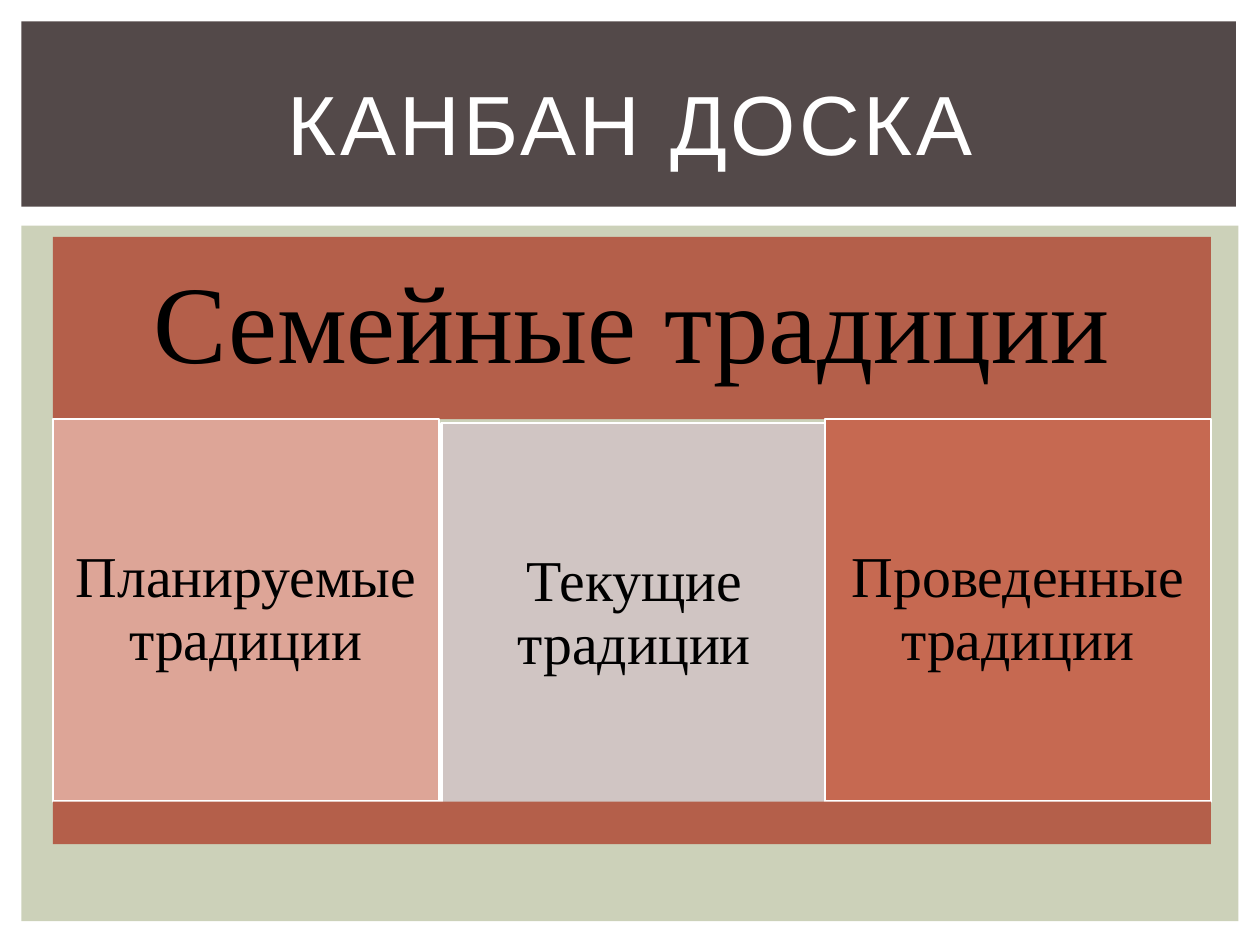
from pptx import Presentation, util as u
from pptx.dml.color import RGBColor
from pptx.enum import shapes, text

# Grid of 100 columns by 75 rows
COLS, ROWS = 100, 75
WIDE, HIGH = u.Inches(10), u.Inches(7.5)
HUES = {
    "sage": "CCD1B9", "dark": "534949", "brick": "B45F4A", "pink": "DDA597",
    "grey": "D0C5C3", "rust": "C66951", "white": "FFFFFF", "black": "000000",
}


def hue(name):
    return RGBColor.from_string(HUES[name])


def place(box):
    x, y, w, h = box
    return (int(WIDE * x / COLS), int(HIGH * y / ROWS),
            int(WIDE * w / COLS), int(HIGH * h / ROWS))


def panel(slide, box, fill, line=None):
    rect = slide.shapes.add_shape(shapes.MSO_SHAPE.RECTANGLE, *place(box))
    rect.shadow.inherit = False
    rect.fill.solid()
    rect.fill.fore_color.rgb = hue(fill)
    if line:
        rect.line.color.rgb = hue(line)
        rect.line.width = u.Pt(1.5)
    else:
        rect.line.fill.background()
    return rect


def write(shape, words, size, font="Times New Roman", color="black",
          inset=None, lead=None, track=0):
    frame = shape.text_frame
    frame.word_wrap = True
    frame.vertical_anchor = text.MSO_ANCHOR.MIDDLE
    if inset is not None:
        frame.margin_left = frame.margin_right = u.Inches(inset)
        frame.margin_top = frame.margin_bottom = u.Inches(inset)
    para = frame.paragraphs[0]
    para.alignment = text.PP_ALIGN.CENTER
    if lead:
        para.line_spacing = lead
    run = para.add_run()
    run.text = words
    run.font.name = font
    run.font.size = u.Pt(size)
    run.font.color.rgb = hue(color)
    if track:
        run.font._element.set("spc", str(track * 100))


def header(slide, box):
    x, y, w, h = box
    panel(slide, box, "dark")
    title = slide.shapes.add_textbox(
        *place((x + 2.5, y + 2.2, w - 4.7, h - 3.2)))
    write(title, "КАНБАН ДОСКА", 48, font="Arial", color="white", track=2)


def board(slide, box):
    x, y, w, h = box
    top, base = 0.3 * h, 0.07 * h
    # Heading band
    write(panel(slide, (x, y, w, top), "brick"),
          "Семейные традиции", 63, inset=0.26, lead=0.9)
    # Three stages, the middle one nudged right and down
    stages = [
        ("Планируемые традиции", "pink", 0),
        ("Текущие традиции", "grey", 1),
        ("Проведенные традиции", "rust", 0),
    ]
    step, tall = w / len(stages), h - top - base
    for i, (words, fill, nudge) in enumerate(stages):
        cell = (x + i * step + 0.2 * nudge, y + top + 0.3 * nudge, step, tall)
        write(panel(slide, cell, fill, line="white"),
              words, 33, inset=0.14, lead=0.9)
    # Closing band
    panel(slide, (x, y + h - base, w, base), "brick")


def main():
    deck = Presentation()
    deck.slide_width, deck.slide_height = WIDE, HIGH
    slide = deck.slides.add_slide(deck.slide_layouts[6])
    # Backdrop, then the two regions
    panel(slide, (1.7, 17.9, 96.6, 55.2), "sage")
    header(slide, (1.7, 1.7, 96.4, 14.7))
    board(slide, (4.2, 18.8, 91.9, 48.2))
    deck.save("out.pptx")


if __name__ == "__main__":
    main()
